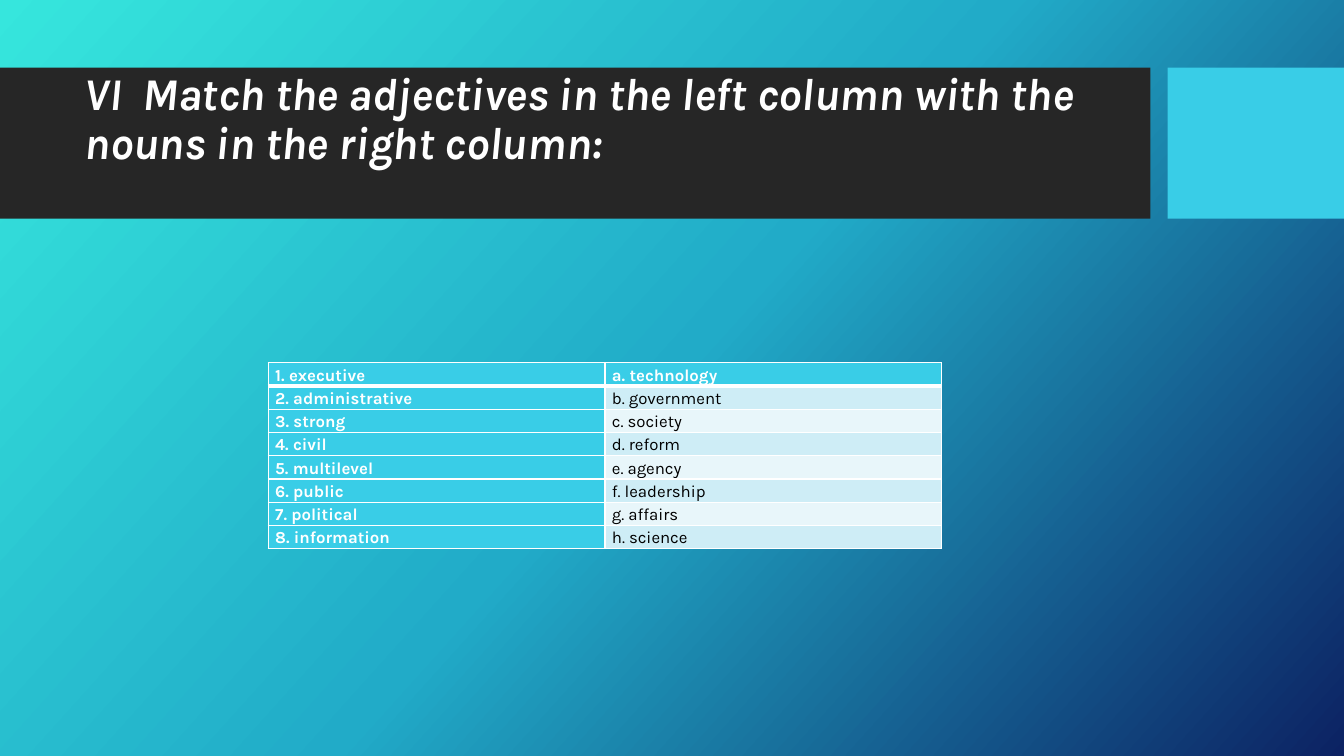
import copy

import pptx
import pptx.dml.color
import pptx.enum.shapes
import pptx.enum.text
import pptx.oxml
import pptx.oxml.ns
import pptx.util

Inches = pptx.util.Inches
Pt = pptx.util.Pt

WHITE, BLACK, CHARCOAL, CYAN = "FFFFFF", "000000", "262626", "39CDE7"
BAND_COLORS = ["E8F6FA", "CEEDF6"]
BACKGROUND_STOPS = [(0, "36E6DD"), (0.5, "21ABC8"), (1, "0C2263")]

WORD_PAIRS = [
    ("1. executive", "a. technology"),
    ("2. administrative", "b. government"),
    ("3. strong", "c. society"),
    ("4. civil", "d. reform"),
    ("5. multilevel", "e. agency"),
    ("6. public", "f. leadership"),
    ("7. political", "g. affairs"),
    ("8. information", "h. science"),
]


def rgb(color):
    return pptx.dml.color.RGBColor.from_string(color)


class SlideBuilder:
    font_name = "Karla"

    def __init__(self, page):
        self.page = page

    def background(self, stops, clockwise_angle):
        fill = self.page.background.fill
        fill.gradient()
        fill.gradient_angle = 360 - clockwise_angle
        stop_list = self.page.element.find(".//" + pptx.oxml.ns.qn("a:gsLst"))
        while len(stop_list) < len(stops):
            stop_list.append(copy.deepcopy(stop_list[0]))
        for stop, (position, color) in zip(fill.gradient_stops, stops):
            stop.position = position
            stop.color.rgb = rgb(color)

    def bar(self, left, top, width, height, color):
        shape = self.page.shapes.add_shape(
            pptx.enum.shapes.MSO_SHAPE.RECTANGLE,
            Inches(left), Inches(top), Inches(width), Inches(height))
        shape.shadow.inherit = False
        shape.fill.solid()
        shape.fill.fore_color.rgb = rgb(color)
        shape.line.fill.background()

    def add_text(self, frame, text, size, color, line_spacing, bold=False, italic=False):
        para = frame.paragraphs[0]
        para.line_spacing = line_spacing
        span = para.add_run()
        span.text = text
        font = span.font
        font.name, font.size = self.font_name, Pt(size)
        font.bold, font.italic = bold, italic
        font.color.rgb = rgb(color)

    def title(self, left, top, width, height, text):
        box = self.page.shapes.add_textbox(
            Inches(left), Inches(top), Inches(width), Inches(height))
        frame = box.text_frame
        frame.word_wrap = True
        frame.vertical_anchor = pptx.enum.text.MSO_ANCHOR.MIDDLE
        frame.margin_bottom = Inches(0.49)
        self.add_text(frame, text, 32.4, WHITE, 0.9, bold=True, italic=True)

    def cell_borders(self, cell, color, **widths):
        """Draw the sides L, R, T and B with the given widths in points."""
        properties = cell._tc.get_or_add_tcPr()
        for index, side in enumerate("LRTB"):
            properties.insert(index, pptx.oxml.parse_xml(
                f'<a:ln{side} {pptx.oxml.ns.nsdecls("a")} w="{Pt(widths[side])}">'
                f'<a:solidFill><a:srgbClr val="{color}"/></a:solidFill></a:ln{side}>'))

    def matching_table(self, left, top, column_width, row_height, rows):
        columns = len(rows[0])
        table = self.page.shapes.add_table(
            len(rows), columns, Inches(left), Inches(top),
            Inches(column_width * columns), Inches(row_height * len(rows))).table
        table.horz_banding = False
        for column in table.columns:
            column.width = Inches(column_width)
        for row_index, words in enumerate(rows):
            table.rows[row_index].height = Inches(row_height)
            for column_index, word in enumerate(words):
                cell = table.cell(row_index, column_index)
                strong = row_index == 0 or column_index == 0
                cell.margin_left = cell.margin_right = Inches(0.07)
                cell.margin_top = cell.margin_bottom = 0
                cell.fill.solid()
                cell.fill.fore_color.rgb = rgb(CYAN if strong else BAND_COLORS[row_index % 2])
                self.cell_borders(cell, WHITE, L=1, R=1,
                                  T=3 if row_index == 1 else 1,
                                  B=3 if row_index == 0 else 1)
                self.add_text(cell.text_frame, word, 12, WHITE if strong else BLACK,
                              1.15, bold=strong)


def main():
    deck = pptx.Presentation()
    deck.slide_width, deck.slide_height = Inches(13.33), Inches(7.5)
    builder = SlideBuilder(deck.slides.add_slide(deck.slide_layouts[6]))
    builder.background(BACKGROUND_STOPS, 42)
    builder.bar(0, 0.67, 11.41, 1.5, CHARCOAL)
    builder.bar(11.58, 0.67, 1.75, 1.5, CYAN)
    builder.title(0.74, 0.82, 10.51, 1.18,
                  "VI  Match the adjectives in the left column with the nouns in the right column:")
    builder.matching_table(2.66, 3.6, 3.34, 0.22, WORD_PAIRS)
    deck.save("out.pptx")


if __name__ == "__main__":
    main()
